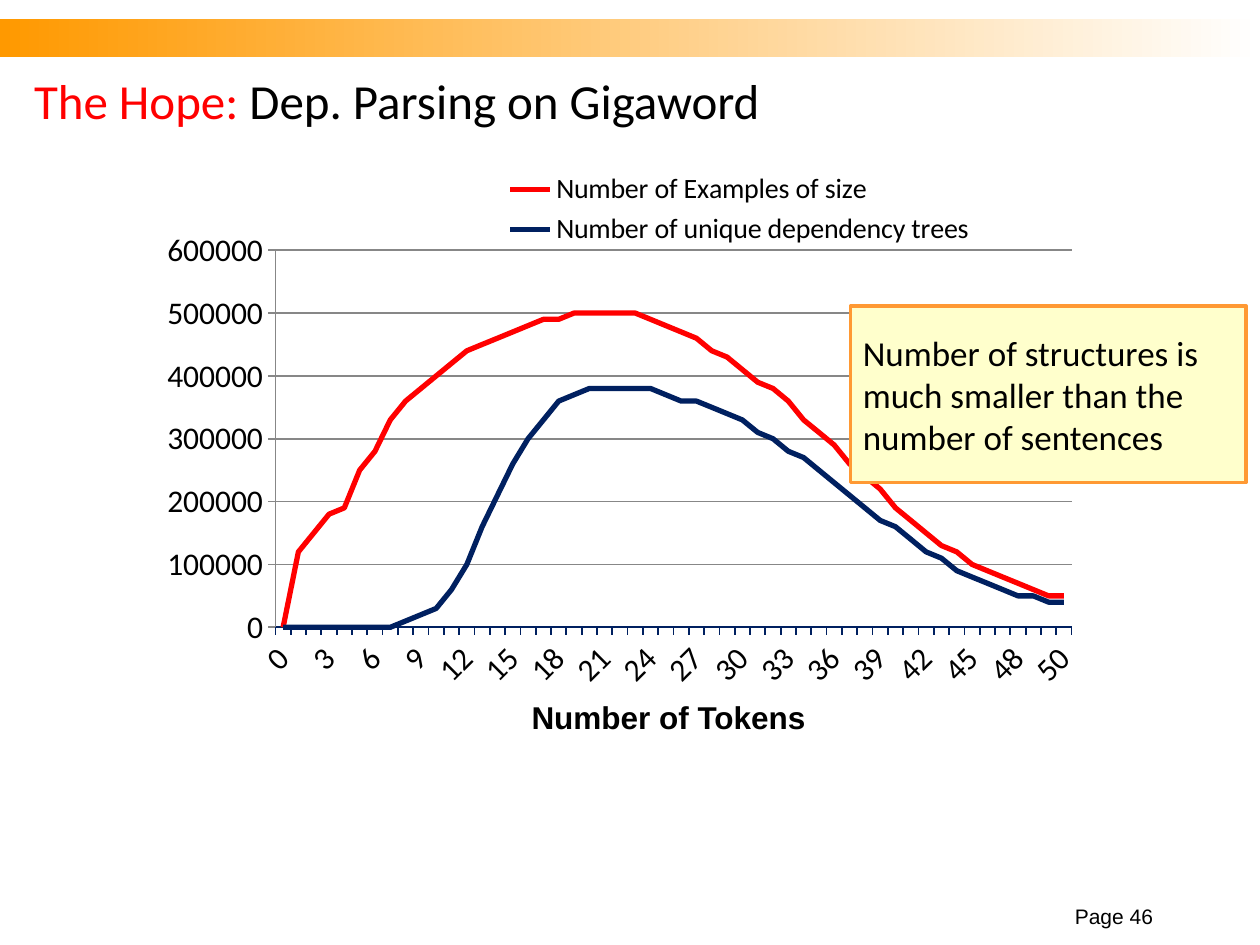
from lxml.etree import SubElement
from pptx import Presentation
from pptx.chart.data import CategoryChartData
from pptx.dml.color import RGBColor
from pptx.enum.chart import XL_CHART_TYPE, XL_LEGEND_POSITION, XL_TICK_MARK
from pptx.enum.shapes import MSO_SHAPE
from pptx.enum.text import MSO_ANCHOR, PP_ALIGN
from pptx.oxml import parse_xml
from pptx.oxml.ns import nsdecls, qn
from pptx.util import Inches, Pt

HUES = {
    "red": "FF0000", "navy": "002060", "black": "000000", "white": "FFFFFF",
    "orange": "FF9900", "edge": "FF9933", "cream": "FFFFCC", "grid": "878787",
}

# Counts in thousands for each sentence length
SIZES = [*range(51), 50]
LINES = [
    ("Number of Examples of size", "red", [
        0, 120, 150, 180, 190, 250, 280, 330, 360, 380, 400, 420, 440,
        450, 460, 470, 480, 490, 490, 500, 500, 500, 500, 500, 490, 480,
        470, 460, 440, 430, 410, 390, 380, 360, 330, 310, 290, 260, 240,
        220, 190, 170, 150, 130, 120, 100, 90, 80, 70, 60, 50, 50]),
    ("Number of unique dependency trees", "navy", [
        0, 0, 0, 0, 0, 0, 0, 0, 10, 20, 30, 60, 100,
        160, 210, 260, 300, 330, 360, 370, 380, 380, 380, 380, 380, 370,
        360, 360, 350, 340, 330, 310, 300, 280, 270, 250, 230, 210, 190,
        170, 160, 140, 120, 110, 90, 80, 70, 60, 50, 50, 40, 40]),
]


def hue(name):
    return RGBColor.from_string(HUES[name])


def style(font, size, face="Calibri", color="black", bold=False):
    font.size, font.name, font.bold = Pt(size), face, bold
    font.color.rgb = hue(color)


def write(frame, *parts, size, face="Calibri", bold=False,
          align=PP_ALIGN.LEFT, anchor=MSO_ANCHOR.MIDDLE):
    """Fill a frame with one paragraph of (text, color) parts."""
    frame.word_wrap = True
    frame.vertical_anchor = anchor
    para = frame.paragraphs[0]
    para.alignment = align
    for text, color in parts:
        run = para.add_run()
        run.text = text
        style(run.font, size, face, color, bold)


def place(plot, x, y, w, h, inner=False):
    """Set a manual layout, in fractions of the chart, on a chart part."""
    node = plot.find(qn("c:layout"))
    if node is None:
        node = parse_xml(f"<c:layout {nsdecls('c')}/>")
        if inner:
            plot.insert(0, node)
        else:
            plot.find(qn("c:legendPos")).addnext(node)
    for kid in list(node):
        node.remove(kid)
    box = SubElement(node, qn("c:manualLayout"))
    rules = [("layoutTarget", "inner")] if inner else []
    rules += [("xMode", "edge"), ("yMode", "edge"),
              ("x", x), ("y", y), ("w", w), ("h", h)]
    for tag, val in rules:
        SubElement(box, qn(f"c:{tag}")).set("val", str(val))


class Deck:
    def __init__(self):
        self.show = Presentation()
        self.show.slide_width, self.show.slide_height = Inches(10), Inches(7.5)
        self.slide = self.show.slides.add_slide(self.show.slide_layouts[5])

    def title(self, spot, *parts, **look):
        head = self.slide.shapes.title
        head.left, head.top, head.width, head.height = map(Inches, spot)
        write(head.text_frame, *parts, **look)

    def text(self, spot, words, **look):
        box = self.slide.shapes.add_textbox(*map(Inches, spot))
        write(box.text_frame, (words, "black"), **look)

    def rect(self, spot):
        box = self.slide.shapes.add_shape(MSO_SHAPE.RECTANGLE, *map(Inches, spot))
        box.shadow.inherit = False
        return box

    def band(self, spot, *colors):
        bar = self.rect(spot)
        bar.line.fill.background()
        bar.fill.gradient()
        bar.fill.gradient_angle = 0
        for stop, color in zip(bar.fill.gradient_stops, colors):
            stop.color.rgb = hue(color)

    def note(self, spot, words, **look):
        box = self.rect(spot)
        box.fill.solid()
        box.fill.fore_color.rgb = hue("cream")
        box.line.color.rgb = hue("edge")
        box.line.width = Pt(2)
        write(box.text_frame, (words, "black"), **look)

    def chart(self, spot):
        data = CategoryChartData(number_format="General")
        data.categories = [str(n) for n in SIZES]
        for name, _, vals in LINES:
            data.add_series(name, [v * 1000 for v in vals])
        chart = self.slide.shapes.add_chart(
            XL_CHART_TYPE.LINE, *map(Inches, spot), data).chart
        chart.has_title = False
        style(chart.font, 18)

        # Series
        plot = chart.plots[0]
        plot.vary_by_categories = False
        for line, (_, color, _) in zip(plot.series, LINES):
            line.smooth = False
            line.format.line.color.rgb = hue(color)
            line.format.line.width = Pt(3)

        # Axes
        cat, val = chart.category_axis, chart.value_axis
        val.minimum_scale, val.maximum_scale, val.major_unit = 0, 600000, 100000
        val.has_major_gridlines = True
        rules = [(cat.format.line, "navy"), (val.format.line, "grid"),
                 (val.major_gridlines.format.line, "grid")]
        for rule, color in rules:
            rule.color.rgb = hue(color)
            rule.width = Pt(1)
        for axis in (cat, val):
            axis.major_tick_mark = XL_TICK_MARK.OUTSIDE
            style(axis.tick_labels.font, 18)
        root = chart.element
        axis = root.find(".//" + qn("c:catAx"))
        axis.find(qn("c:txPr")).find(qn("a:bodyPr")).set("rot", "-2700000")
        skip = parse_xml(f'<c:tickLblSkip {nsdecls("c")} val="3"/>')
        axis.find(qn("c:lblOffset")).addnext(skip)

        # Legend and plot area
        chart.has_legend = True
        chart.legend.position = XL_LEGEND_POSITION.RIGHT
        chart.legend.include_in_layout = False
        style(chart.legend.font, 16)
        place(chart.legend._element, 0.36, 0.02, 0.46, 0.16)
        place(root.find(".//" + qn("c:plotArea")),
              0.176, 0.176, 0.71, 0.706, inner=True)


def main():
    deck = Deck()
    # Header
    deck.band((0, 0.15, 10, 0.3), "orange", "white")
    deck.title((0.17, 0.5, 9, 0.58), ("The Hope: ", "red"),
               ("Dep. Parsing on Gigaword", "black"), size=28)
    # Chart with its caption and callout
    deck.chart((0.62, 1.24, 8.9, 4.24))
    deck.text((4.12, 5.49, 2.65, 0.4), "Number of Tokens",
              size=18, face="Arial", bold=True, anchor=MSO_ANCHOR.TOP)
    deck.note((6.75, 2.43, 3.14, 1.4),
              "Number of structures is much smaller than the number of sentences",
              size=20)
    # Footer
    deck.text((8.25, 7.17, 1, 0.25), "Page 46", size=12, face="Arial",
              align=PP_ALIGN.RIGHT, anchor=MSO_ANCHOR.BOTTOM)
    deck.show.save("out.pptx")


if __name__ == "__main__":
    main()
